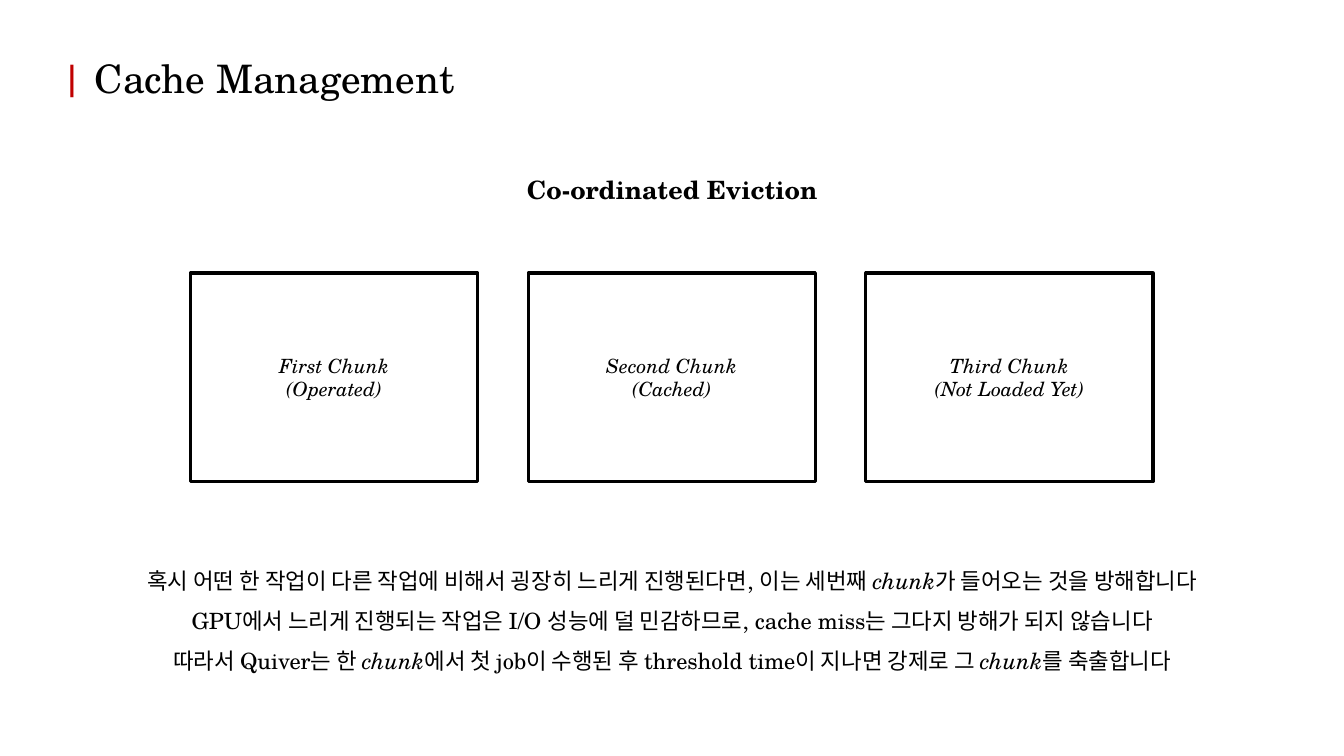
from dataclasses import dataclass

from pptx import Presentation
from pptx.dml.color import RGBColor
from pptx.enum.shapes import MSO_SHAPE
from pptx.enum.text import MSO_ANCHOR, MSO_AUTO_SIZE, PP_ALIGN
from pptx.util import Cm, Pt


@dataclass(frozen=True)
class Theme:
    font: str = "TeX Gyre Schola"
    ink: RGBColor = RGBColor(0x00, 0x00, 0x00)
    accent: RGBColor = RGBColor(0xC0, 0x00, 0x00)
    paper: RGBColor = RGBColor(0xFF, 0xFF, 0xFF)
    title: Pt = Pt(28)
    heading: Pt = Pt(18)
    body: Pt = Pt(16)
    label: Pt = Pt(14)
    border: Pt = Pt(2.25)


THEME = Theme()

CHUNKS = [
    ("First Chunk", "(Operated)"),
    ("Second Chunk", "(Cached)"),
    ("Third Chunk", "(Not Loaded Yet)"),
]
CHUNK_LEFT, CHUNK_TOP, CHUNK_PITCH = 4.8, 6.88, 8.51
CHUNK_WIDTH, CHUNK_HEIGHT = 7.24, 5.26

# Each line is a list of runs; "chunk" is set in italics
EXPLANATION = [
    ["혹시 어떤 한 작업이 다른 작업에 비해서 굉장히 느리게 진행된다면, 이는 세번째 ",
     "chunk", "가 들어오는 것을 방해합니다"],
    ["GPU에서 느리게 진행되는 작업은 I/O 성능에 덜 민감하므로, "
     "cache miss는 그다지 방해가 되지 않습니다"],
    ["따라서 Quiver는 한 ", "chunk",
     "에서 첫 job이 수행된 후 threshold time이 지나면 강제로 그 ",
     "chunk", "를 축출합니다"],
]


def add_run(p, text, size, color=THEME.ink, bold=False, italic=False):
    r = p.add_run()
    r.text = text
    r.font.name = THEME.font
    r.font.size = size
    r.font.color.rgb = color
    r.font.bold = bold
    r.font.italic = italic


def add_paragraph(tf, first, spacing=None):
    p = tf.paragraphs[0] if first else tf.add_paragraph()
    p.alignment = PP_ALIGN.CENTER
    p.line_spacing = spacing
    return p


def add_text_frame(s, left, top, width, height, anchor=MSO_ANCHOR.TOP):
    tf = s.shapes.add_textbox(Cm(left), Cm(top), Cm(width), Cm(height)).text_frame
    tf.word_wrap = True
    tf.auto_size = MSO_AUTO_SIZE.SHAPE_TO_FIT_TEXT
    tf.vertical_anchor = anchor
    return tf


def add_title(s, text):
    p = add_text_frame(s, 1.27, 1.24, 10.77, 1.45).paragraphs[0]
    add_run(p, "|", THEME.title, THEME.accent)
    add_run(p, " " + text, THEME.title)


def add_heading(s, text):
    tf = add_text_frame(s, 3.63, 3.96, 26.62, 1.27, MSO_ANCHOR.MIDDLE)
    add_run(add_paragraph(tf, True, 1.5), text, THEME.heading, bold=True)


def add_chunk(s, left, lines):
    sp = s.shapes.add_shape(MSO_SHAPE.RECTANGLE, Cm(left), Cm(CHUNK_TOP),
                            Cm(CHUNK_WIDTH), Cm(CHUNK_HEIGHT))
    sp.shadow.inherit = False
    sp.fill.solid()
    sp.fill.fore_color.rgb = THEME.paper
    sp.line.color.rgb = THEME.ink
    sp.line.width = THEME.border
    tf = sp.text_frame
    tf.vertical_anchor = MSO_ANCHOR.MIDDLE
    for i, line in enumerate(lines):
        add_run(add_paragraph(tf, i == 0), line, THEME.label, italic=True)


def add_explanation(s, lines):
    tf = add_text_frame(s, 2.79, 13.82, 28.3, 3.23)
    for i, runs in enumerate(lines):
        p = add_paragraph(tf, i == 0, 1.5)
        for text in runs:
            add_run(p, text, THEME.body, italic=text == "chunk")


def main():
    prs = Presentation()
    prs.slide_width, prs.slide_height = Cm(33.87), Cm(19.05)
    s = prs.slides.add_slide(prs.slide_layouts[6])

    # Title and heading
    add_title(s, "Cache Management")
    add_heading(s, "Co-ordinated Eviction")

    # Row of chunks
    for i, lines in enumerate(CHUNKS):
        add_chunk(s, CHUNK_LEFT + i * CHUNK_PITCH, lines)

    # Explanation below the chunks
    add_explanation(s, EXPLANATION)

    prs.save("out.pptx")


if __name__ == "__main__":
    main()
